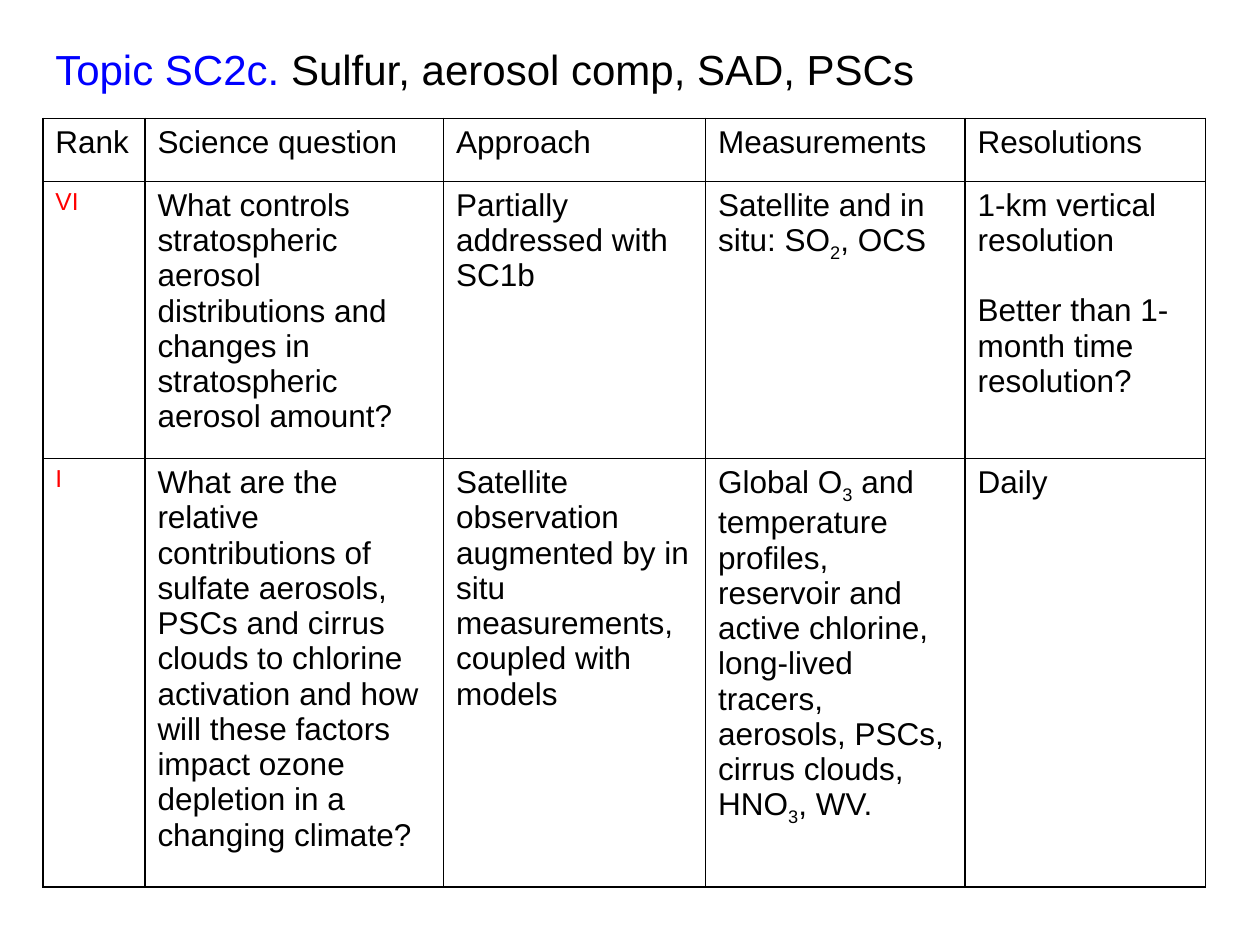
import pptx
import pptx.dml.color
import pptx.enum.text
import pptx.oxml
import pptx.oxml.ns
import pptx.util
from pptx.util import Inches

FONT = "Arial"
COLORS = {"text": "000000", "topic": "0000FF", "rank": "FF0000", "cell": "FFFFFF"}
COL_WIDTHS = [0.81, 2.37, 2.08, 2.06, 1.91]
ROW_HEIGHTS = [0.5, 2.2, 3.4]

# An underscore lowers the character after it; a line break starts a paragraph.
ROWS = [
    ["Rank", "Science question", "Approach", "Measurements", "Resolutions"],
    [
        "VI",
        "What controls stratospheric aerosol distributions and changes in "
        "stratospheric aerosol amount?",
        "Partially addressed with SC1b",
        "Satellite and in situ: SO_2, OCS",
        "1-km vertical resolution\nBetter than 1-month time resolution?",
    ],
    [
        "I",
        "What are the relative contributions of sulfate aerosols, PSCs and cirrus "
        "clouds to chlorine activation and how will these factors impact ozone "
        "depletion in a changing climate?",
        "Satellite observation augmented by in situ measurements, coupled with models",
        "Global O_3 and temperature profiles, reservoir and active chlorine, "
        "long-lived tracers, aerosols, PSCs, cirrus clouds, HNO_3, WV.",
        "Daily",
    ],
]


def rgb(name):
    return pptx.dml.color.RGBColor.from_string(COLORS[name])


def style_font(font, size, color):
    font.name = FONT
    font.size = pptx.util.Pt(size)
    font.color.rgb = rgb(color)


def add_run(p, text, baseline=None):
    r = p.add_run()
    r.text = text
    if baseline:
        r.font._element.set("baseline", str(baseline))
    return r


def add_subscripted(p, text):
    """Add text in which the character after each underscore is a subscript."""
    first, *rest = text.split("_")
    add_run(p, first)
    for part in rest:
        add_run(p, part[0], baseline=-25000)
        add_run(p, part[1:])


def set_borders(cell):
    tc_pr = cell._tc.get_or_add_tcPr()
    for side in ("lnL", "lnR", "lnT", "lnB"):
        tc_pr.append(pptx.oxml.parse_xml(
            f'<a:{side} {pptx.oxml.ns.nsdecls("a")} w="12700"><a:solidFill>'
            f'<a:srgbClr val="{COLORS["text"]}"/></a:solidFill></a:{side}>'
        ))


def fill_cell(cell, text, size, color):
    set_borders(cell)
    cell.fill.solid()
    cell.fill.fore_color.rgb = rgb("cell")
    tf = cell.text_frame
    for i, line in enumerate(text.split("\n")):
        p = tf.add_paragraph() if i else tf.paragraphs[0]
        if i:
            p.space_before = pptx.util.Pt(20)
        add_subscripted(p, line)
        style_font(p.font, size, color)


def add_question_table(s):
    table = s.shapes.add_table(
        len(ROWS), len(COL_WIDTHS), Inches(0.34), Inches(0.94),
        Inches(sum(COL_WIDTHS)), Inches(sum(ROW_HEIGHTS)),
    ).table
    table.first_row = table.horz_banding = False
    for column, width in zip(table.columns, COL_WIDTHS):
        column.width = Inches(width)
    for i, (row, height) in enumerate(zip(ROWS, ROW_HEIGHTS)):
        table.rows[i].height = Inches(height)
        for j, text in enumerate(row):
            is_rank = i > 0 and j == 0
            size, color = (14, "rank") if is_rank else (18, "text")
            fill_cell(table.cell(i, j), text, size, color)


def add_title(s):
    tf = s.shapes.add_textbox(Inches(0.34), Inches(0.3), Inches(7.09), Inches(0.5)).text_frame
    tf.word_wrap = False
    tf.auto_size = pptx.enum.text.MSO_AUTO_SIZE.SHAPE_TO_FIT_TEXT
    p = tf.paragraphs[0]
    for text, color in (("Topic SC2c. ", "topic"), ("Sulfur, aerosol comp, SAD, PSCs", "text")):
        style_font(add_run(p, text).font, 24, color)


def main():
    prs = pptx.Presentation()
    prs.slide_width, prs.slide_height = Inches(10), Inches(7.5)
    s = prs.slides.add_slide(prs.slide_layouts[6])
    add_question_table(s)
    add_title(s)
    prs.save("out.pptx")


if __name__ == "__main__":
    main()
